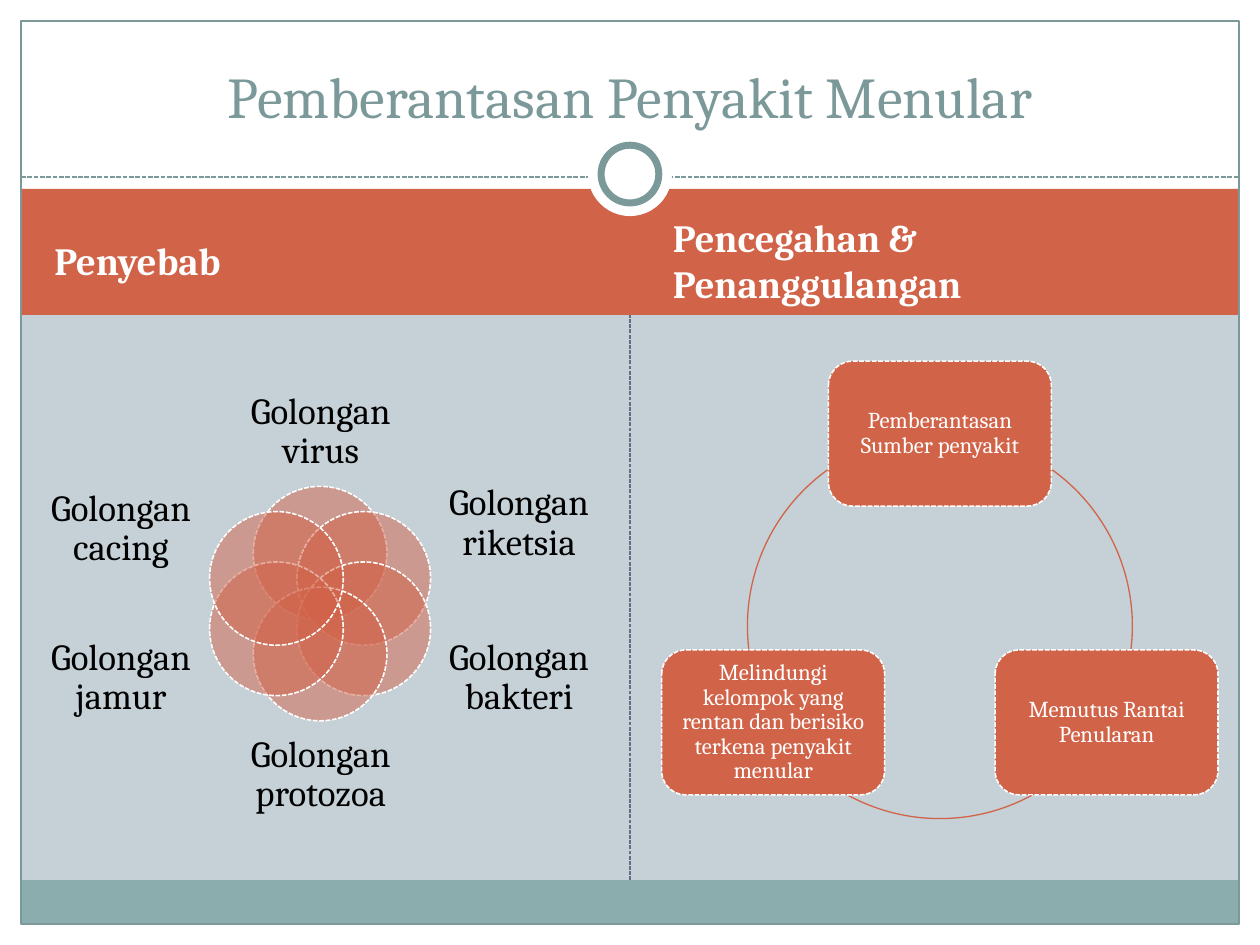
from math import cos, radians, sin

from lxml import etree
from pptx import Presentation
from pptx.dml.color import RGBColor
from pptx.enum.dml import MSO_LINE
from pptx.enum.shapes import MSO_CONNECTOR, MSO_SHAPE
from pptx.enum.text import MSO_ANCHOR, MSO_AUTO_SIZE, PP_ALIGN
from pptx.oxml.ns import qn
from pptx.util import Pt

RECT, OVAL = MSO_SHAPE.RECTANGLE, MSO_SHAPE.OVAL
CARD, ARC = MSO_SHAPE.ROUNDED_RECTANGLE, MSO_SHAPE.ARC
STRAIGHT = MSO_CONNECTOR.STRAIGHT
DASH = MSO_LINE.SQUARE_DOT
MIDDLE, BOTTOM = MSO_ANCHOR.MIDDLE, MSO_ANCHOR.BOTTOM
LEFT, CENTER = PP_ALIGN.LEFT, PP_ALIGN.CENTER
NO_FIT = MSO_AUTO_SIZE.NONE

WHITE = RGBColor(0xFF, 0xFF, 0xFF)
BLACK = RGBColor(0, 0, 0)
BACKDROP = RGBColor(0xC5, 0xD1, 0xD7)
RUST = RGBColor(0xD1, 0x63, 0x49)
SAGE = RGBColor(0x8C, 0xAD, 0xAE)
TEAL = RGBColor(0x7C, 0x99, 0x9A)
SLATE = RGBColor(0x64, 0x6B, 0x86)
FONT = "Cambria"

TITLE = "Pemberantasan Penyakit Menular"
HEADINGS = [("Penyebab", 24), ("Pencegahan & Penanggulangan", 377.5)]
CAUSES = [
    ("Golongan virus", (135.4, 221, 95.8, 52)),
    ("Golongan riketsia", (251.3, 270.7, 90.7, 57)),
    ("Golongan bakteri", (251.3, 355.7, 90.7, 63.4)),
    ("Golongan protozoa", (135.4, 417, 95.8, 52)),
    ("Golongan jamur", (23.8, 355.7, 90.7, 63.4)),
    ("Golongan cacing", (23.8, 270.7, 90.7, 63.4)),
]
MEASURES = [
    "Pemberantasan Sumber penyakit",
    "Memutus Rantai Penularan",
    "Melindungi kelompok yang rentan dan berisiko terkena penyakit menular",
]
CYCLE_ARCS = [(305.7, 6.8), (61.6, 118.4), (173.2, 234.3)]

SLIDE_W, SLIDE_H, MARGIN = 720, 540, 12
INNER_W = SLIDE_W - 2 * MARGIN
BADGE_CENTER = (SLIDE_W / 2, 99.5)
PETAL_CENTER, PETAL_RING, PETAL_SIZE = (182.9, 344.9), 28.8, 76.4
CYCLE_CENTER, CYCLE_RADIUS = (537.1, 357.8), 110
CARD_W, CARD_H = 127.4, 82.8


def points(*lengths):
    return [Pt(length) for length in lengths]


def style_line(line, color, width, dash=None):
    line.color.rgb = color
    line.width = Pt(width)
    if dash is not None:
        line.dash_style = dash


def add_shape(kind, box, fill=None, outline=None):
    shape = slide.shapes.add_shape(kind, *points(*box))
    shape.shadow.inherit = False
    if fill is None:
        shape.fill.background()
    else:
        shape.fill.solid()
        shape.fill.fore_color.rgb = fill
    if outline is None:
        shape.line.fill.background()
    else:
        style_line(shape.line, *outline)
    return shape


def add_line(start, end, color, width):
    line = slide.shapes.add_connector(STRAIGHT, *points(*start, *end))
    style_line(line.line, color, width, DASH)
    etree.SubElement(line._element.spPr, qn("a:effectLst"))
    return line


def write(shape, text, size, color, align=CENTER, anchor=MIDDLE,
          inset=None, spacing=None, bold=False):
    frame = shape.text_frame
    frame.word_wrap = True
    frame.auto_size = NO_FIT
    frame.vertical_anchor = anchor
    if inset is not None:
        frame.margin_left = frame.margin_right = Pt(inset)
        frame.margin_top = frame.margin_bottom = Pt(inset)
    paragraph = frame.paragraphs[0]
    paragraph.alignment = align
    if spacing is not None:
        paragraph.line_spacing = spacing
    run = paragraph.add_run()
    run.text = text
    run.font.name = FONT
    run.font.size = Pt(size)
    run.font.bold = bold
    run.font.color.rgb = color


def set_opacity(shape, percent):
    color = shape.fill._xPr.find(qn("a:solidFill"))[0]
    etree.SubElement(color, qn("a:alpha"), val=str(percent * 1000))


def centered(center, width, height):
    return center[0] - width / 2, center[1] - height / 2, width, height


def on_ring(center, radius, index, count):
    angle = radians(360 * index / count - 90)
    return center[0] + radius * cos(angle), center[1] + radius * sin(angle)


prs = Presentation()
prs.slide_width, prs.slide_height = points(SLIDE_W, SLIDE_H)
slide = prs.slides.add_slide(prs.slide_layouts[5])
slide.background.fill.solid()
slide.background.fill.fore_color.rgb = BACKDROP

divider = add_line((360, 503), (360, 180), SLATE, 0.75)
for border in [
    (0, 0, SLIDE_W, 114),
    (0, SLIDE_H - MARGIN, SLIDE_W, MARGIN),
    (0, 0, MARGIN, SLIDE_H),
    (SLIDE_W - MARGIN, 0, MARGIN, SLIDE_H),
]:
    add_shape(RECT, border, WHITE)
heading_band = add_shape(RECT, (MARGIN, 108, INNER_W, 72), RUST)
footer_band = add_shape(RECT, (MARGIN, 503, INNER_W, 25), SAGE)
divider.begin_connect(footer_band, 0)
divider.end_connect(heading_band, 2)
add_line((MARGIN, 101), (SLIDE_W - MARGIN, 101), TEAL, 0.9)
add_shape(RECT, (MARGIN, MARGIN, INNER_W, SLIDE_H - 2 * MARGIN),
          outline=(TEAL, 0.75))
add_shape(OVAL, centered(BADGE_CENTER, 48, 48), WHITE)
add_shape(OVAL, centered(BADGE_CENTER, 33, 33), WHITE, (TEAL, 4))

title = slide.shapes.title
title.left, title.top, title.width, title.height = points(24, 18, 672, 60)
write(title, TITLE, 33, TEAL, anchor=BOTTOM)
slide.shapes._spTree.append(title._element)

for heading, left in HEADINGS:
    heading_box = slide.shapes.add_textbox(*points(left, 120, 318, 57.6))
    write(heading_box, heading, 22, WHITE, align=LEFT, bold=True)

for index, (cause, label_box) in enumerate(CAUSES):
    spot = on_ring(PETAL_CENTER, PETAL_RING, index, len(CAUSES))
    petal = add_shape(OVAL, centered(spot, PETAL_SIZE, PETAL_SIZE), RUST,
                      (WHITE, 0.9, DASH))
    set_opacity(petal, 50)
    label = slide.shapes.add_textbox(*points(*label_box))
    write(label, cause, 21, BLACK, inset=0, spacing=0.9)

for index, (measure, angles) in enumerate(zip(MEASURES, CYCLE_ARCS)):
    spot = on_ring(CYCLE_CENTER, CYCLE_RADIUS, index, len(MEASURES))
    card = add_shape(CARD, centered(spot, CARD_W, CARD_H), RUST,
                     (WHITE, 0.9, DASH))
    write(card, measure, 13, WHITE, inset=3.6, spacing=0.9)
    arc = add_shape(ARC, centered(CYCLE_CENTER, 2 * CYCLE_RADIUS,
                                  2 * CYCLE_RADIUS), outline=(RUST, 0.75))
    for end, degrees in enumerate(angles):
        arc.adjustments[end] = degrees * 0.6

prs.save("out.pptx")
